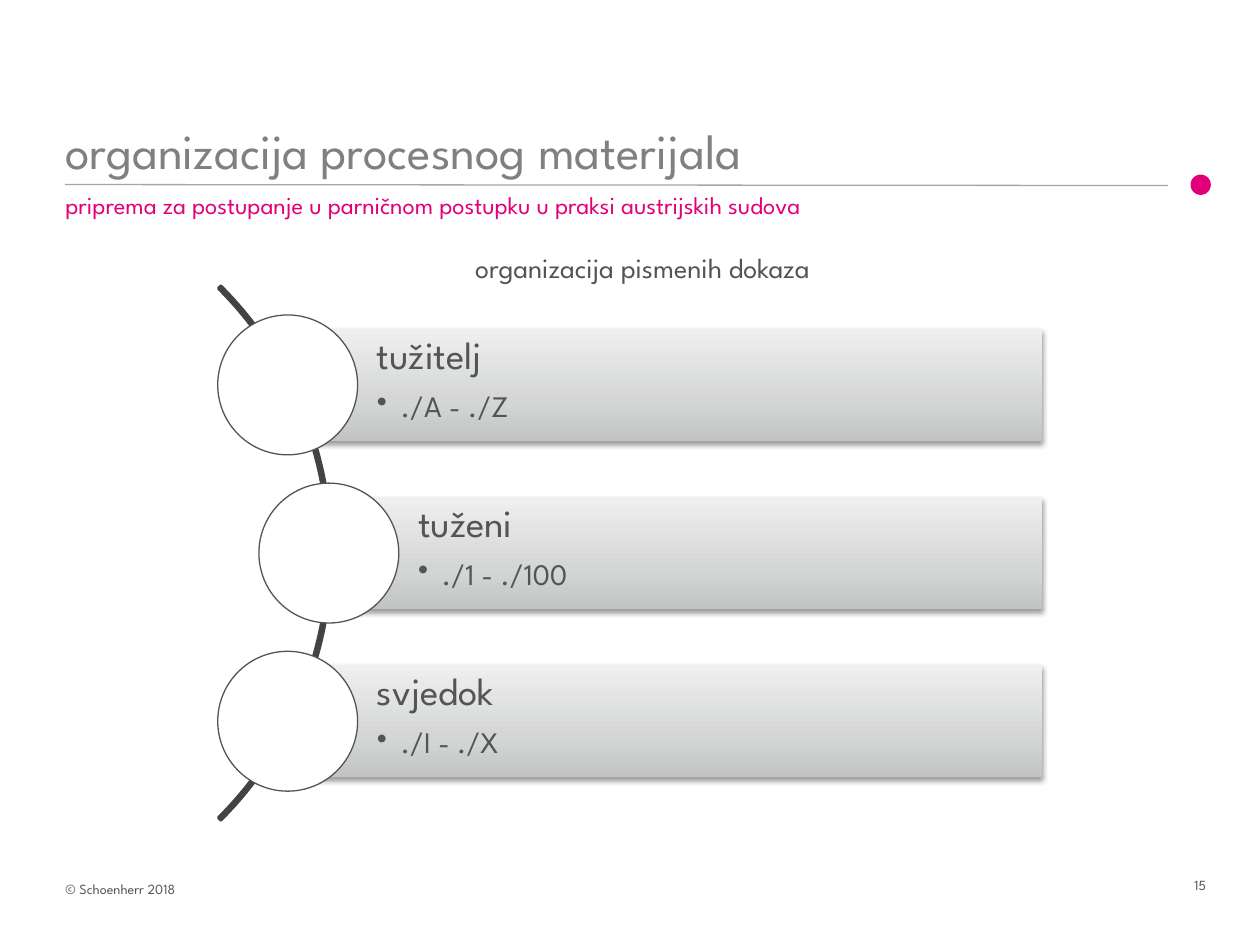
from copy import deepcopy
from dataclasses import dataclass
from lxml.etree import SubElement
from pptx import Presentation
from pptx.dml.color import RGBColor
from pptx.enum.shapes import MSO_CONNECTOR, MSO_SHAPE
from pptx.enum.text import MSO_ANCHOR, PP_ALIGN
from pptx.oxml.ns import qn
from pptx.util import Cm, Pt


@dataclass(frozen=True)
class Theme:
    """Colours, font and type sizes of the slide."""
    font: str = "League Spartan"
    text: str = "535455"
    title: str = "808080"
    pink: str = "E2007A"
    sub: str = "E20078"
    rule: str = "A6A6A6"
    arc: str = "424344"
    white: str = "FFFFFF"
    fade: tuple = ((0, "EFEFEF"), (0.65, "D4D5D5"), (1, "C2C3C3"))
    huge: int = 28
    large: int = 22
    list: int = 17
    body: int = 16
    small: int = 14
    tiny: int = 8


THEME = Theme()


def rgb(code):
    """Turn a hex code into a colour."""
    return RGBColor.from_string(code)


def style(para, size, color=THEME.text):
    """Set the font of a paragraph."""
    para.font.name = THEME.font
    para.font.size = Pt(size)
    para.font.color.rgb = rgb(color)


def label(slide, box, text, size, color=THEME.text, anchor=MSO_ANCHOR.TOP):
    """Place one line of text and return its paragraph."""
    frame = slide.shapes.add_textbox(*map(Cm, box)).text_frame
    frame.word_wrap = True
    frame.vertical_anchor = anchor
    para = frame.paragraphs[0]
    para.text = text
    style(para, size, color)
    return para


def shape(slide, kind, box, fill=None, line=None, width=0.75):
    """Place a flat preset shape."""
    item = slide.shapes.add_shape(kind, *map(Cm, box))
    item.shadow.inherit = False
    if fill:
        item.fill.solid()
        item.fill.fore_color.rgb = rgb(fill)
    else:
        item.fill.background()
    if line:
        item.line.color.rgb = rgb(line)
        item.line.width = Pt(width)
    else:
        item.line.fill.background()
    return item


def shade(item):
    """Give a shape the grey fade and a soft shadow."""
    item.fill.gradient()
    item.fill.gradient_angle = 270
    props = item._element.spPr
    stops = props.find(".//" + qn("a:gsLst"))
    stops.append(deepcopy(stops[0]))
    for stop, (pos, code) in zip(item.fill.gradient_stops, THEME.fade):
        stop.position = pos
        stop.color.rgb = rgb(code)
    glow = SubElement(props.find(qn("a:effectLst")), qn("a:outerShdw"),
                      blurRad=str(Pt(3.1)), dist=str(Pt(1.6)),
                      dir="5400000", rotWithShape="0")
    tint = SubElement(glow, qn("a:srgbClr"), val="000000")
    SubElement(tint, qn("a:alpha"), val="38000")


def header(slide, box):
    """Draw the title, its rule and dot, and the subtitle."""
    left, top, width, height = box
    label(slide, (left, top, width, 1.4), "organizacija procesnog materijala",
          THEME.huge, THEME.title, MSO_ANCHOR.BOTTOM)
    label(slide, (left, top + 1.37, 20.6, height - 1.37),
          "priprema za postupanje u parničnom postupku u praksi austrijskih sudova",
          THEME.small, THEME.sub)
    y = top + 1.38
    rule = slide.shapes.add_connector(
        MSO_CONNECTOR.STRAIGHT, Cm(left + 0.24), Cm(y), Cm(left + 22.48), Cm(y + 0.02))
    rule.line.color.rgb = rgb(THEME.rule)
    rule.line.width = Pt(0.75)
    SubElement(rule._element.spPr, qn("a:effectLst"))
    shape(slide, MSO_SHAPE.OVAL, (left + 22.93, y - 0.2, 0.41, 0.41), THEME.pink)


def entry(slide, box, name, range_):
    """Draw one bar with its heading and bullet, and a disc on its left end."""
    left, top, width, size = box
    tall = 2.26
    bar = shape(slide, MSO_SHAPE.RECTANGLE,
                (left + size / 2, top + (size - tall) / 2, width - size / 2, tall))
    shade(bar)
    frame = bar.text_frame
    frame.word_wrap = True
    frame.vertical_anchor = MSO_ANCHOR.TOP
    frame.margin_left = Cm(1.8)
    frame.margin_top = frame.margin_right = frame.margin_bottom = Cm(0.15)
    head, item = frame.paragraphs[0], frame.add_paragraph()
    props = item._p.get_or_add_pPr()
    props.set("marL", str(Cm(0.48)))
    props.set("indent", str(Cm(-0.48)))
    SubElement(props, qn("a:buChar"), char="•")
    rows = ((head, name, THEME.large, 0.35), (item, range_, THEME.list, 0.15))
    for para, text, pts, gap in rows:
        para.text = text
        para.alignment = PP_ALIGN.LEFT
        para.line_spacing = 0.9
        para.space_after = Pt(round(pts * gap, 1))
        style(para, pts)
    shape(slide, MSO_SHAPE.OVAL, (left, top, size, size), THEME.white, THEME.text)


def diagram(slide, box, items):
    """Draw the arc and spread the entries evenly along it."""
    left, top, width, height = box
    size, span = 2.82, 15.21
    arc = shape(slide, MSO_SHAPE.BLOCK_ARC,
                (left - 12.92, top + (height - span) / 2, span, span),
                line=THEME.arc, width=2)
    for index, value in enumerate((189, 27, 0.004)):
        arc.adjustments[index] = value
    step = (height - size) / (len(items) - 1)
    for row, (name, range_) in enumerate(items):
        shift = 0.83 * (row % 2)
        entry(slide, (left + shift, top + row * step, width - shift, size), name, range_)


def footer(slide, box):
    """Write the copyright line and the page number."""
    left, top, width, height = box
    label(slide, (left, top + 0.08, 5.6, height), "© Schoenherr 2018", THEME.tiny)
    label(slide, (left + width - 1.2, top, 1.2, height), "15", THEME.tiny)


def main():
    """Build the slide and save it."""
    deck = Presentation()
    deck.slide_width, deck.slide_height = Cm(25.4), Cm(19.05)
    slide = deck.slides.add_slide(deck.slide_layouts[6])
    header(slide, (1.07, 2.34, 22.5, 2.56))
    lead = label(slide, (2.34, 4.93, 21.23, 1), "organizacija pismenih dokaza", THEME.body)
    lead.alignment = PP_ALIGN.CENTER
    diagram(slide, (4.39, 6.35, 16.62, 9.6),
            (("tužitelj", "./A - ./Z"), ("tuženi", "./1 - ./100"), ("svjedok", "./I - ./X")))
    footer(slide, (1.07, 17.55, 23.96, 0.61))
    deck.save("out.pptx")


if __name__ == "__main__":
    main()
